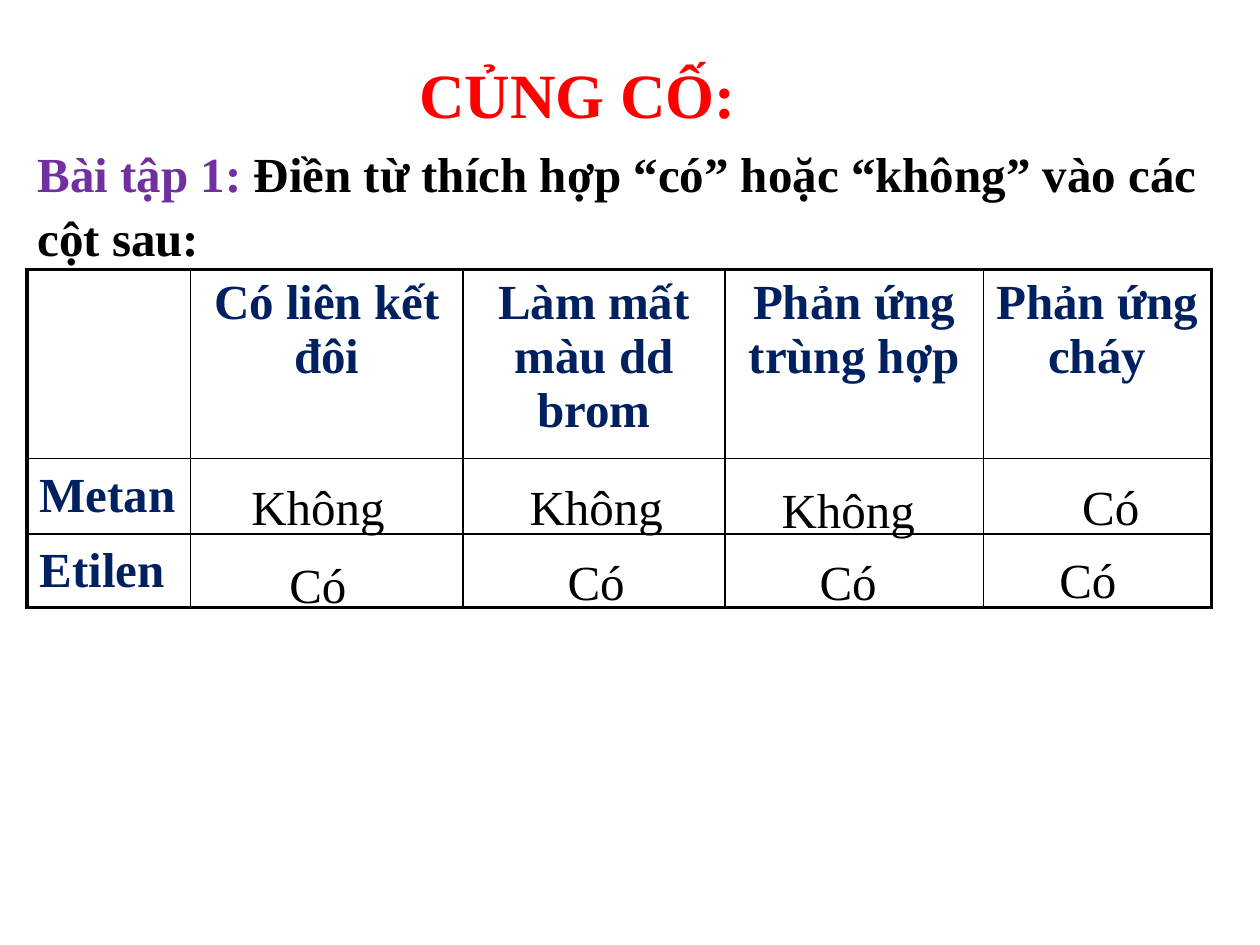
from typing import NamedTuple

from pptx import Presentation
from pptx.dml.color import RGBColor
from pptx.enum.text import MSO_ANCHOR as Anchor, MSO_AUTO_SIZE as Fit, PP_ALIGN as Align
from pptx.oxml import parse_xml
from pptx.oxml.ns import nsdecls
from pptx.util import Pt

FONT = "Times New Roman"
NAVY, RED, PURPLE, BLACK = "002060", "FF0000", "7030A0", "000000"
THIN, THICK = 1, 2.25


class Run(NamedTuple):
    text: str
    color: str
    size: float = 28
    bold: bool = True


class Box(NamedTuple):
    left: float
    top: float
    width: float
    height: float
    runs: list[Run]
    align: Align = Align.LEFT


def paint(font, color: str) -> None:
    font.color.rgb = RGBColor.from_string(color)


def write(para, runs: list[Run], align: Align) -> None:
    para.alignment = align
    for item in runs:
        run = para.add_run()
        run.text = item.text
        run.font.name = FONT
        run.font.size = Pt(item.size)
        run.font.bold = item.bold
        paint(run.font, item.color)


def draw_box(slide, box: Box) -> None:
    shape = slide.shapes.add_textbox(
        Pt(box.left), Pt(box.top), Pt(box.width), Pt(box.height))
    frame = shape.text_frame
    frame.word_wrap = True
    frame.auto_size = Fit.SHAPE_TO_FIT_TEXT
    para = frame.paragraphs[0]
    para.line_spacing = 1.1
    write(para, box.runs, box.align)


def edge(cell, side: str, width: float, order: int) -> None:
    line = parse_xml(
        f'<a:ln{side} {nsdecls("a")} w="{Pt(width)}"><a:solidFill>'
        f'<a:srgbClr val="{BLACK}"/></a:solidFill></a:ln{side}>')
    cell._tc.get_or_add_tcPr().insert(order, line)


def draw_table(slide, left: float, top: float, cols: list[float],
               rows: list[float], words: list[list[str]]) -> None:
    frame = slide.shapes.add_table(
        len(rows), len(cols), Pt(left), Pt(top), Pt(sum(cols)), Pt(sum(rows)))
    table = frame.table
    table.first_row = table.horz_banding = False
    for col, width in zip(table.columns, cols):
        col.width = Pt(width)
    for row, height in zip(table.rows, rows):
        row.height = Pt(height)
    for r, line in enumerate(words):
        for c, text in enumerate(line):
            cell = table.cell(r, c)
            cell.fill.background()
            # Heavy rule round the outside, light rules within
            outer = {"L": c == 0, "R": c == len(cols) - 1,
                     "T": r == 0, "B": r == len(rows) - 1}
            for order, (side, heavy) in enumerate(outer.items()):
                edge(cell, side, THICK if heavy else THIN, order)
            if text:
                cell.vertical_anchor = Anchor.TOP if r == 0 else Anchor.MIDDLE
                write(cell.text_frame.paragraphs[0], [Run(text, NAVY)],
                      Align.CENTER if r == 0 else Align.LEFT)


def main() -> None:
    deck = Presentation()
    deck.slide_width, deck.slide_height = Pt(720), Pt(540)
    slide = deck.slides.add_slide(deck.slide_layouts[6])

    # Table to fill in
    draw_table(slide, 15.4, 154, [93.6, 155.5, 149.8, 147.6, 130.3],
               [108, 43.2, 41.8],
               [["", "Có liên kết đôi", "Làm mất màu dd brom",
                 "Phản ứng trùng hợp", "Phản ứng cháy"],
                ["Metan"] + [""] * 4,
                ["Etilen"] + [""] * 4])

    # Task and heading
    draw_box(slide, Box(14.4, 74.9, 705.6, 75, [
        Run("Bài tập 1: ", PURPLE),
        Run("Điền từ thích hợp “có” hoặc “không” vào các cột sau:", BLACK)]))
    draw_box(slide, Box(232.5, 23.8, 203, 51, [Run("CỦNG CỐ:", RED, 36)]))

    # Answers laid over the table: left, top, word
    answers = [
        (123, 265.7, "Không"), (282, 265.7, "Không"),
        (426, 267, "Không"), (576, 265.7, "Có"),
        (123, 310, "Có"), (282, 308.2, "Có"),
        (426, 308.2, "Có"), (563, 307.4, "Có")]
    for left, top, word in answers:
        draw_box(slide, Box(left, top, 117.4, 41,
                            [Run(word, BLACK, bold=False)], Align.CENTER))

    deck.save("out.pptx")


if __name__ == "__main__":
    main()
